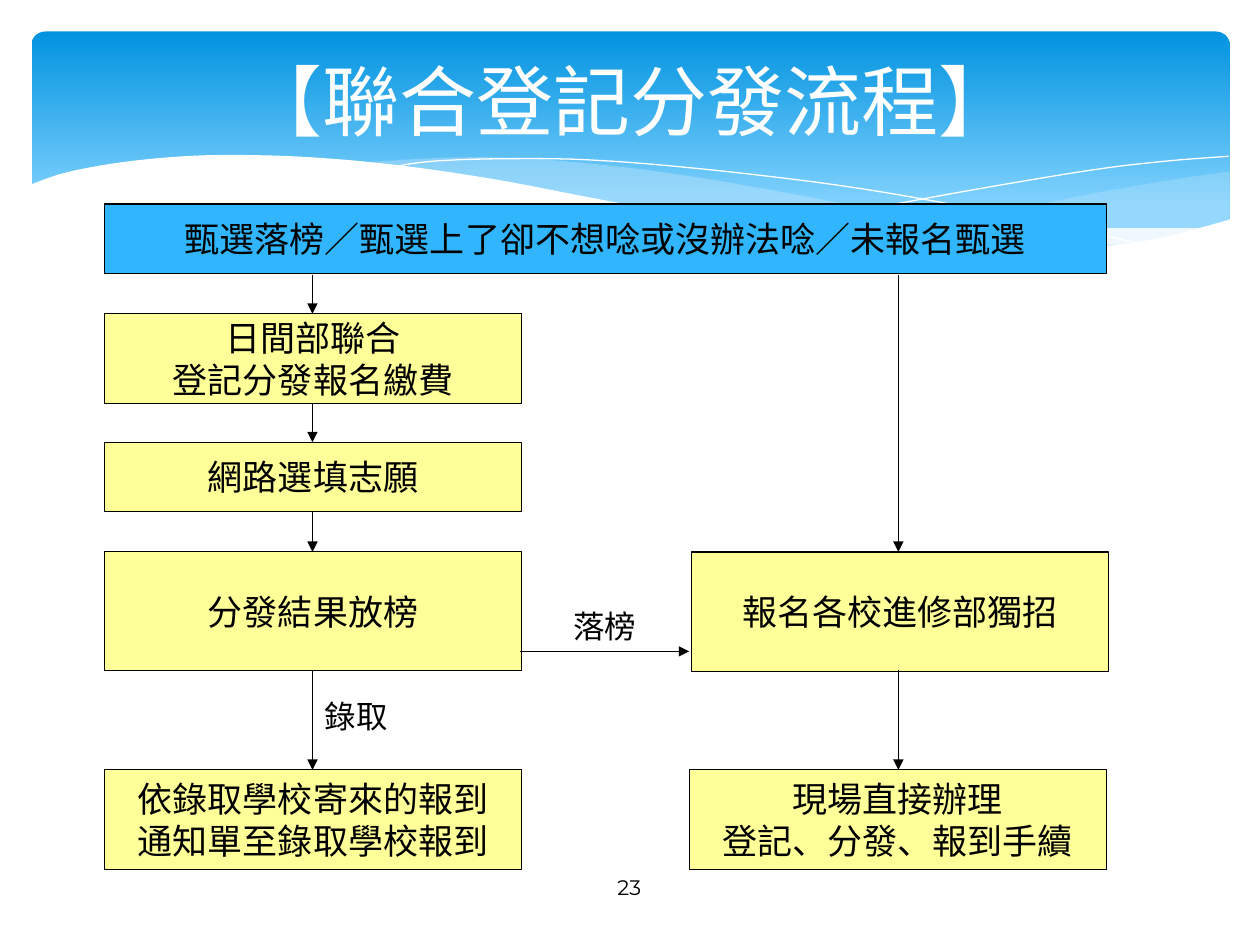
from pptx import Presentation
from pptx.dml.color import RGBColor
from pptx.enum.shapes import MSO_CONNECTOR, MSO_SHAPE
from pptx.enum.text import MSO_ANCHOR, PP_ALIGN
from pptx.oxml.ns import qn
from pptx.util import Inches, Pt
from lxml.etree import SubElement

BLACK = RGBColor(0x00, 0x00, 0x00)
WHITE = RGBColor(0xFF, 0xFF, 0xFF)
SKY_TOP = RGBColor(0x02, 0x93, 0xE0)
SKY_BOTTOM = RGBColor(0x83, 0xD3, 0xFE)
MIST = RGBColor(0xC6, 0xE7, 0xFC)
BLUE = RGBColor(0x31, 0xB6, 0xFD)
YELLOW = RGBColor(0xFF, 0xFF, 0x99)

# Each wave: smooth edges joined by straight pieces, fill, opacity in percent
WAVES = [
    ([[(9.76, 1.36), (9.35, 1.42), (8.76, 1.52), (8.05, 1.66), (7.29, 1.79), (6.61, 1.89)],
      [(6.61, 1.89), (7.18, 1.95), (7.81, 1.99), (8.35, 1.99), (8.89, 1.95), (9.35, 1.86),
       (9.76, 1.74)]], MIST, 29),
    ([[(8.93, 1.95), (8.37, 1.89), (7.41, 1.75), (6.29, 1.54), (5.55, 1.41), (4.89, 1.32),
       (4.2, 1.26), (3.61, 1.25), (2.86, 1.29)],
      [(2.86, 1.29), (3.62, 1.38), (4.49, 1.54), (5.66, 1.76), (6.5, 1.88), (7.22, 1.96),
       (7.85, 2), (8.38, 2), (8.93, 1.95)]], MIST, 40),
    ([[(3.09, 1.33), (3.43, 1.28), (4.01, 1.26), (4.69, 1.27), (5.56, 1.34), (6.65, 1.47),
       (7.6, 1.63), (8.31, 1.77), (9.07, 1.94)]], None, 100),
    ([[(6.13, 1.82), (6.95, 1.65), (7.76, 1.5), (8.66, 1.35), (9.24, 1.28), (9.75, 1.24)]],
     None, 100),
    ([[(9.77, 1.74), (9.2, 1.89), (8.63, 1.97), (8.09, 1.99), (7.44, 1.96), (6.68, 1.89),
       (5.79, 1.77), (4.75, 1.58), (3.91, 1.42), (3.15, 1.31), (2.5, 1.25), (1.93, 1.23),
       (1.46, 1.24), (0.95, 1.29), (0.52, 1.37), (0.23, 1.47)],
      [(0.23, 2.41), (9.77, 2.41)]], WHITE, 100),
]

LEFT, RIGHT, BOX_W = 0.83, 5.47, 3.31
LEFT_MID, RIGHT_MID = 2.48, 7.13
START = (LEFT, 1.62, RIGHT + BOX_W - LEFT, 0.55, BLUE,
         "甄選落榜／甄選上了卻不想唸或沒辦法唸／未報名甄選")
STEPS = [  # left, top, height, text
    (LEFT, 2.49, 0.71, "日間部聯合\n登記分發報名繳費"),
    (LEFT, 3.51, 0.55, "網路選填志願"),
    (LEFT, 4.38, 0.94, "分發結果放榜"),
    (LEFT, 6.11, 0.79, "依錄取學校寄來的報到\n通知單至錄取學校報到"),
    (RIGHT + 0.02, 4.38, 0.95, "報名各校進修部獨招"),
    (RIGHT, 6.11, 0.79, "現場直接辦理\n登記、分發、報到手續"),
]
DOWN_ARROWS = [  # x, from y, to y
    (LEFT_MID, 2.18, 2.49), (LEFT_MID, 3.2, 3.51), (LEFT_MID, 4.06, 4.38),
    (LEFT_MID, 5.32, 6.11), (RIGHT_MID, 2.18, 4.38), (RIGHT_MID, 5.32, 6.11),
]
ARROWS = [(x, y1, x, y2) for x, y1, y2 in DOWN_ARROWS] + [(4.13, 5.17, RIGHT, 5.17)]
LABELS = [(4.45, 4.77, "落榜"), (LEFT_MID, 5.48, "錄取")]

prs = Presentation()
prs.slide_width, prs.slide_height = Inches(10), Inches(7.5)
slide = prs.slides.add_slide(prs.slide_layouts[6])
shapes = slide.shapes


def smooth(points, steps=5):
    """Return points on a Catmull-Rom curve through the given points."""
    ends = [points[0], *points, points[-1]]
    curve = [points[0]]
    for a, b, c, d in zip(ends, ends[1:], ends[2:], ends[3:]):
        for i in range(1, steps + 1):
            t = i / steps
            curve.append(tuple(
                (2 * q + (r - p) * t + (2 * p - 5 * q + 4 * r - s) * t ** 2
                 + (3 * q - p - 3 * r + s) * t ** 3) / 2
                for p, q, r, s in zip(a, b, c, d)))
    return curve


def add_wave(edges, color, opacity):
    points = [(Inches(x), Inches(y)) for edge in edges for x, y in smooth(edge)]
    builder = shapes.build_freeform(*points[0])
    builder.add_line_segments(points[1:], close=color is not None)
    sp = builder.convert_to_shape()
    sp.shadow.inherit = False
    if color is None:
        sp.fill.background()
        sp.line.color.rgb = WHITE
        sp.line.width = Pt(0)
        return
    sp.fill.solid()
    sp.fill.fore_color.rgb = color
    sp.line.fill.background()
    if opacity < 100:
        clr = sp.fill._xPr.find(qn("a:solidFill"))[0]
        SubElement(clr, qn("a:alpha"), val=str(opacity * 1000))


def set_text(sp, text, size, font="Arial", color=BLACK, align=PP_ALIGN.CENTER,
             anchor=MSO_ANCHOR.MIDDLE, wrap=False):
    tf = sp.text_frame
    tf.text = text
    tf.word_wrap = wrap
    tf.vertical_anchor = anchor
    for p in tf.paragraphs:
        p.alignment = align
        for r in p.runs:
            r.font.size, r.font.name = Pt(size), font
            r.font.color.rgb = color


def add_text(x, y, w, h, text, size, **style):
    set_text(shapes.add_textbox(Inches(x), Inches(y), Inches(w), Inches(h)), text, size, **style)


def add_box(x, y, w, h, color, text):
    sp = shapes.add_shape(MSO_SHAPE.RECTANGLE, Inches(x), Inches(y), Inches(w), Inches(h))
    sp.shadow.inherit = False
    sp.fill.solid()
    sp.fill.fore_color.rgb = color
    sp.line.color.rgb = BLACK
    sp.line.width = Pt(0.75)
    set_text(sp, text, 20)


def add_arrow(x1, y1, x2, y2):
    cn = shapes.add_connector(MSO_CONNECTOR.STRAIGHT, Inches(x1), Inches(y1),
                              Inches(x2), Inches(y2))
    cn.line.color.rgb = BLACK
    cn.line.width = Pt(0.75)
    SubElement(cn.line._get_or_add_ln(), qn("a:tailEnd"), type="triangle")
    SubElement(cn._element.spPr, qn("a:effectLst"))


banner = shapes.add_shape(MSO_SHAPE.ROUNDED_RECTANGLE, Inches(0.25), Inches(0.25),
                          Inches(9.51), Inches(1.56))
banner.adjustments[0] = 0.07
banner.shadow.inherit = False
banner.line.fill.background()
banner.fill.gradient()
banner.fill.gradient_angle = 270
for stop, color, position in zip(banner.fill.gradient_stops, (SKY_TOP, SKY_BOTTOM), (0, 0.9)):
    stop.color.rgb = color
    stop.position = position

for wave in WAVES:
    add_wave(*wave)

add_text(4.36, 6.84, 1.27, 0.4, "23", 12, font="Montserrat", wrap=True)
add_text(0.62, 0.29, 8.77, 1, "【聯合登記分發流程】", 44, font="Cabin", color=WHITE, wrap=True)
add_box(*START)
for x, y, h, text in STEPS:
    add_box(x, y, BOX_W, h, YELLOW, text)
for arrow in ARROWS:
    add_arrow(*arrow)
for x, y, text in LABELS:
    add_text(x, y, 0.7, 0.4, text, 18, align=PP_ALIGN.LEFT, anchor=MSO_ANCHOR.TOP)

prs.save("out.pptx")
